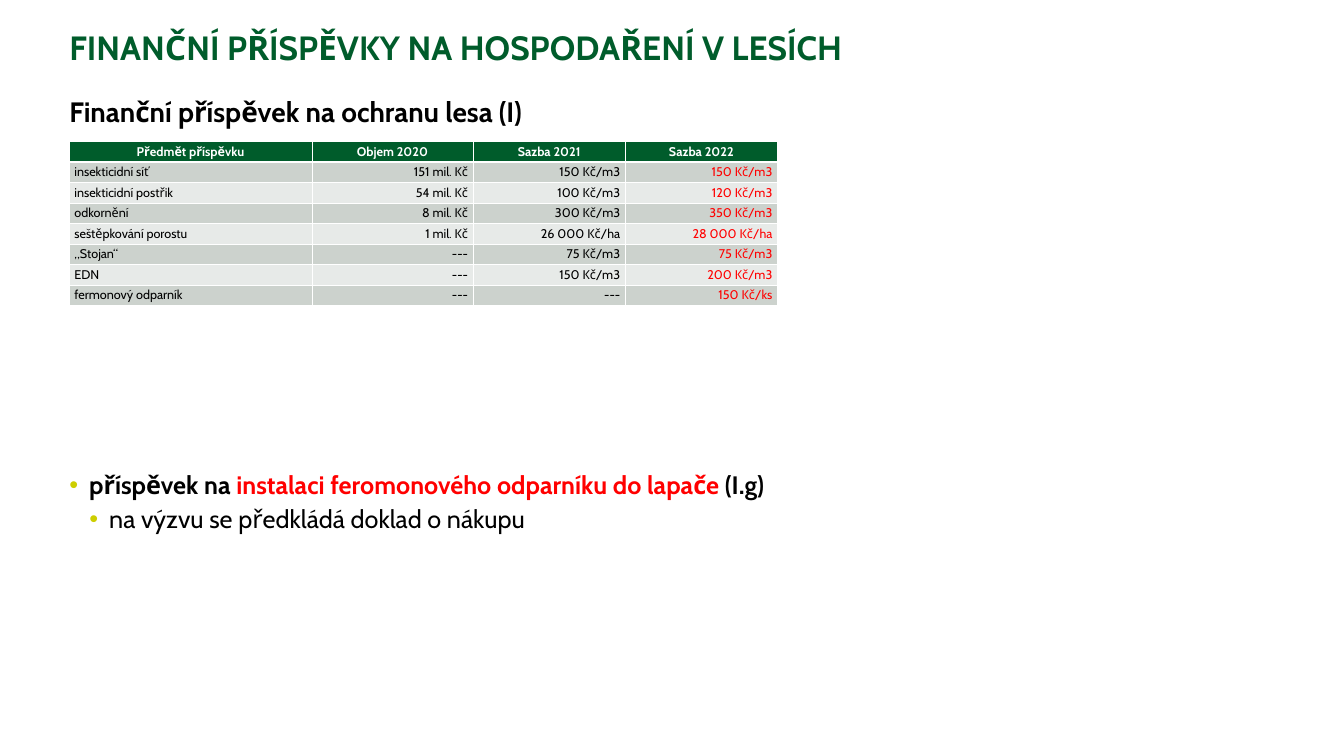
from lxml.etree import SubElement
from pptx import Presentation
from pptx.dml.color import RGBColor
from pptx.enum.text import MSO_ANCHOR, PP_ALIGN
from pptx.oxml.ns import qn
from pptx.util import Pt

EMU_PER_PX = 9525
FONT = "Cabin"
COLOURS = {
    "green": "005C2B",
    "lime": "CDCE00",
    "red": "FF0000",
    "black": "000000",
    "white": "FFFFFF",
    "band_dark": "CCD2CD",
    "band_light": "E7EAE8",
}
COLUMN_WIDTHS = [462, 307, 290, 290]
RATES = [
    ["Předmět příspěvku", "Objem 2020", "Sazba 2021", "Sazba 2022"],
    ["insekticidní síť", "151 mil. Kč", "150 Kč/m3", "150 Kč/m3"],
    ["insekticidní postřik", "54 mil. Kč", "100 Kč/m3", "120 Kč/m3"],
    ["odkornění", "8 mil. Kč", "300 Kč/m3", "350 Kč/m3"],
    ["seštěpkování porostu", "1 mil. Kč", "26 000 Kč/ha", "28 000 Kč/ha"],
    ["„Stojan“", "---", "75 Kč/m3", "75 Kč/m3"],
    ["EDN", "---", "150 Kč/m3", "200 Kč/m3"],
    ["fermonový odparník", "---", "---", "150 Kč/ks"],
]


def px(length):
    """Turn whole pixels into EMU."""
    return length * EMU_PER_PX


def colour(name):
    """Look up a named colour."""
    return RGBColor.from_string(COLOURS[name])


def write(paragraph, text, *, size, color="black", bold=False):
    """Add one formatted run to a paragraph."""
    run = paragraph.add_run()
    run.text = text
    run.font.name = FONT
    run.font.size = Pt(size)
    run.font.bold = bold
    run.font.color.rgb = colour(color)


def add_text_frame(slide, box):
    """Add a wrapping text box without insets and return its frame."""
    frame = slide.shapes.add_textbox(*map(px, box)).text_frame
    frame.word_wrap = True
    frame.vertical_anchor = MSO_ANCHOR.TOP
    frame.margin_left = frame.margin_right = 0
    frame.margin_top = frame.margin_bottom = 0
    return frame


def add_heading(slide, box, text, **text_format):
    """Place a single bold heading in the box."""
    paragraph = add_text_frame(slide, box).paragraphs[0]
    paragraph.line_spacing = 0.9
    write(paragraph, text, bold=True, **text_format)


def set_bullet(paragraph, level):
    """Give a paragraph a lime bullet with a hanging indent."""
    indent = px(38)
    paragraph.level = level
    properties = paragraph._p.get_or_add_pPr()
    properties.set("marL", str(indent * (level + 1)))
    properties.set("indent", str(-indent))
    bullet_colour = SubElement(properties, qn("a:buClr"))
    SubElement(bullet_colour, qn("a:srgbClr"), val=COLOURS["lime"])
    SubElement(properties, qn("a:buFont"), typeface="Arial")
    SubElement(properties, qn("a:buChar"), char="•")


def add_bullets(slide, box):
    """Place the main point and its detail in the box."""
    frame = add_text_frame(slide, box)
    point, detail = frame.paragraphs[0], frame.add_paragraph()
    for level, paragraph in enumerate((point, detail)):
        set_bullet(paragraph, level)
        paragraph.line_spacing = 0.9
    detail.space_before = Pt(10)
    write(point, "příspěvek na ", size=36, bold=True)
    write(point, "instalaci feromonového odparníku do lapače ", size=36, color="red", bold=True)
    write(point, "(I.g)", size=36, bold=True)
    write(detail, "na výzvu se předkládá doklad o nákupu", size=36)


def set_borders(cell, top, bottom):
    """Draw white cell borders, with top and bottom widths in points."""
    properties = cell._tc.get_or_add_tcPr()
    for side, width in {"L": 1, "R": 1, "T": top, "B": bottom}.items():
        line = SubElement(properties, qn(f"a:ln{side}"), w=str(Pt(width)))
        fill = SubElement(line, qn("a:solidFill"))
        SubElement(fill, qn("a:srgbClr"), val=COLOURS["white"])


def fill_cell(cell, text, row, column):
    """Style and fill one cell according to its row and column."""
    header = row == 0
    set_borders(cell, top=3 if row == 1 else 1, bottom=3 if header else 1)
    cell.fill.solid()
    band = "band_dark" if row % 2 else "band_light"
    cell.fill.fore_color.rgb = colour("green" if header else band)
    paragraph = cell.text_frame.paragraphs[0]
    if header:
        paragraph.alignment = PP_ALIGN.CENTER
        text_colour = "white"
    else:
        paragraph.alignment = PP_ALIGN.RIGHT if column else PP_ALIGN.LEFT
        text_colour = "red" if column == 3 else "black"
    write(paragraph, text, size=18, color=text_colour, bold=header)


def add_rates_table(slide, box):
    """Place the table of rates in the box."""
    shape = slide.shapes.add_table(len(RATES), len(COLUMN_WIDTHS), *map(px, box))
    table = shape.table
    for column, width in zip(table.columns, COLUMN_WIDTHS):
        column.width = px(width)
    for row, texts in enumerate(RATES):
        table.rows[row].height = px(box[3] // len(RATES))
        for column, text in enumerate(texts):
            fill_cell(table.cell(row, column), text, row, column)


def main():
    """Build and save the slide."""
    presentation = Presentation()
    presentation.slide_width, presentation.slide_height = px(2560), px(1440)
    slide = presentation.slides.add_slide(presentation.slide_layouts[6])
    left = 132
    add_heading(slide, (left, 59, 2298, 128), "FINANČNÍ PŘÍSPĚVKY NA HOSPODAŘENÍ V LESÍCH",
                size=48, color="green")
    add_heading(slide, (left, 187, 2348, 70), "Finanční příspěvek na ochranu lesa (I)", size=40)
    add_rates_table(slide, (left, 270, sum(COLUMN_WIDTHS), 312))
    add_bullets(slide, (left, 900, 2348, 453))
    presentation.save("out.pptx")


if __name__ == "__main__":
    main()
